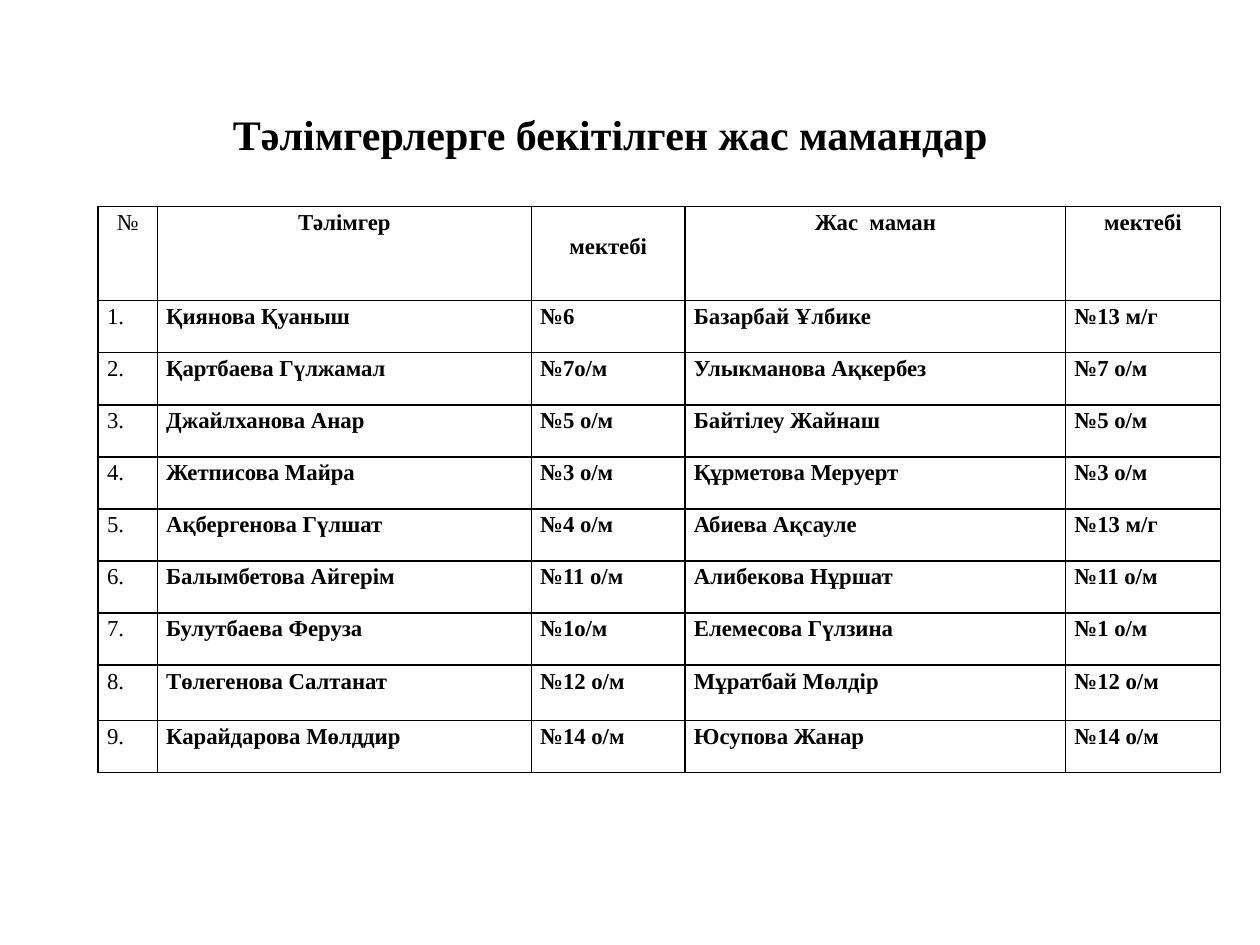
from lxml.etree import SubElement as Sub
from pptx import Presentation
from pptx.dml.color import RGBColor as Rgb
from pptx.enum.text import MSO_ANCHOR as Anchor, MSO_AUTO_SIZE as Fit, PP_ALIGN as Align
from pptx.oxml.ns import qn
from pptx.util import Cm, Pt

INK = {"text": "000000", "line": "000000", "cell": "FFFFFF"}
FONT = "Times New Roman"
COLS = [1.19, 7.54, 3.1, 7.67, 3.12]
TALL = {0: 1.9, 8: 1.11}
ROW = 1.05
HEAD = ["№", "Тәлімгер", "мектебі", "Жас  маман", "мектебі"]
PAIRS = [
    ("Қиянова Қуаныш", "№6", "Базарбай Ұлбике", "№13 м/г"),
    ("Қартбаева Гүлжамал", "№7о/м", "Улыкманова Ақкербез", "№7 о/м"),
    ("Джайлханова Анар", "№5 о/м", "Байтілеу Жайнаш", "№5 о/м"),
    ("Жетписова Майра", "№3 о/м", "Құрметова Меруерт", "№3 о/м"),
    ("Ақбергенова Гүлшат", "№4 о/м", "Абиева Ақсауле", "№13 м/г"),
    ("Балымбетова Айгерім", "№11 о/м", "Алибекова Нұршат", "№11 о/м"),
    ("Булутбаева Феруза", "№1о/м", "Елемесова Гүлзина", "№1 о/м"),
    ("Төлегенова Салтанат", "№12 о/м", "Мұратбай Мөлдір", "№12 о/м"),
    ("Карайдарова Мөлддир", "№14 о/м", "Юсупова Жанар", "№14 о/м"),
]


def write(frame, text, size=13, bold=True, align=Align.LEFT, gap=1.0):
    """Put one formatted paragraph into a text frame."""
    para = frame.paragraphs[0]
    para.alignment, para.line_spacing = align, gap
    run = para.add_run()
    run.text = text
    font = run.font
    font.name, font.size, font.bold = FONT, Pt(size), bold
    font.color.rgb = Rgb.from_string(INK["text"])


def edge(cell):
    """Draw a thin line on all four sides of a cell."""
    props = cell._tc.get_or_add_tcPr()
    for at, side in enumerate(("lnL", "lnR", "lnT", "lnB")):
        line = props.makeelement(qn(f"a:{side}"), {"w": str(Pt(1))})
        fill = Sub(line, qn("a:solidFill"))
        Sub(fill, qn("a:srgbClr"), val=INK["line"])
        props.insert(at, line)


def add_title(slide, left, top, width, height):
    """Place the slide title at the foot of its box."""
    title = slide.shapes.title
    title.left, title.top, title.width, title.height = map(Cm, (left, top, width, height))
    frame = title.text_frame
    frame.word_wrap, frame.auto_size = True, Fit.NONE
    frame.vertical_anchor = Anchor.BOTTOM
    write(frame, "Тәлімгерлерге бекітілген жас мамандар", size=24, align=Align.CENTER)


def add_list(slide, left, top):
    """Place the table of mentors and young teachers."""
    rows = [HEAD] + [(f"{n}.", *pair) for n, pair in enumerate(PAIRS, 1)]
    highs = [TALL.get(r, ROW) for r in range(len(rows))]
    box = map(Cm, (left, top, sum(COLS), sum(highs)))
    table = slide.shapes.add_table(len(rows), len(COLS), *box).table
    for col, wide in zip(table.columns, COLS):
        col.width = Cm(wide)
    for r, (row, high) in enumerate(zip(rows, highs)):
        table.rows[r].height = Cm(high)
        for c, text in enumerate(row):
            cell = table.cell(r, c)
            cell.margin_left = cell.margin_right = Cm(0.18)
            cell.margin_top = Cm(0.49 if (r, c) == (0, 2) else 0)
            cell.margin_bottom = Cm(0)
            cell.fill.solid()
            cell.fill.fore_color.rgb = Rgb.from_string(INK["cell"])
            edge(cell)
            align = Align.LEFT if r else Align.CENTER
            write(cell.text_frame, text, bold=c > 0, align=align, gap=1.15)


def main():
    """Build and save the slide."""
    deck = Presentation()
    deck.slide_width, deck.slide_height = Cm(25.4), Cm(19.05)
    slide = deck.slides.add_slide(deck.slide_layouts[5])
    add_title(slide, 0, 0, 24.61, 3.33)
    add_list(slide, 1.98, 4.16)
    deck.save("out.pptx")


if __name__ == "__main__":
    main()
